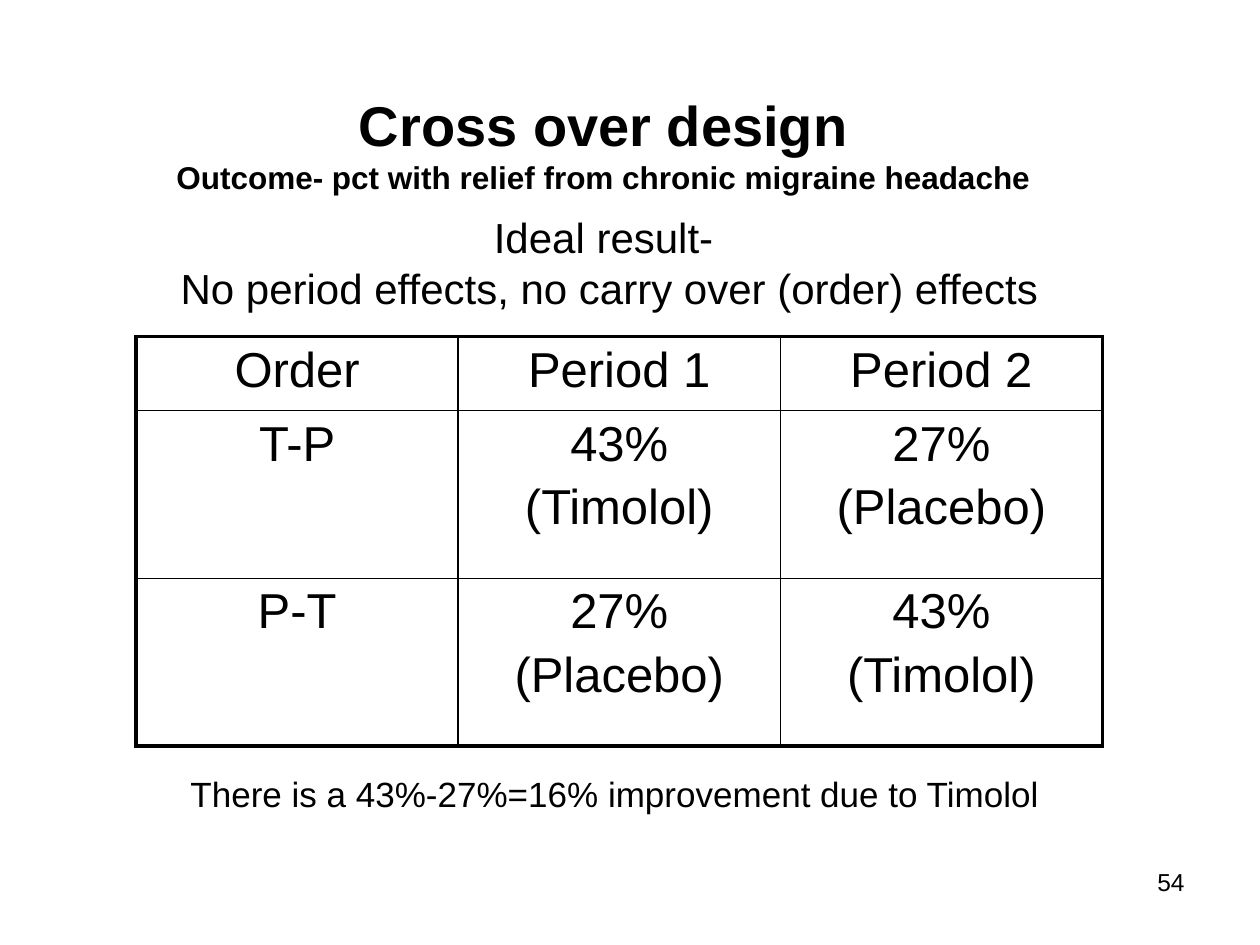
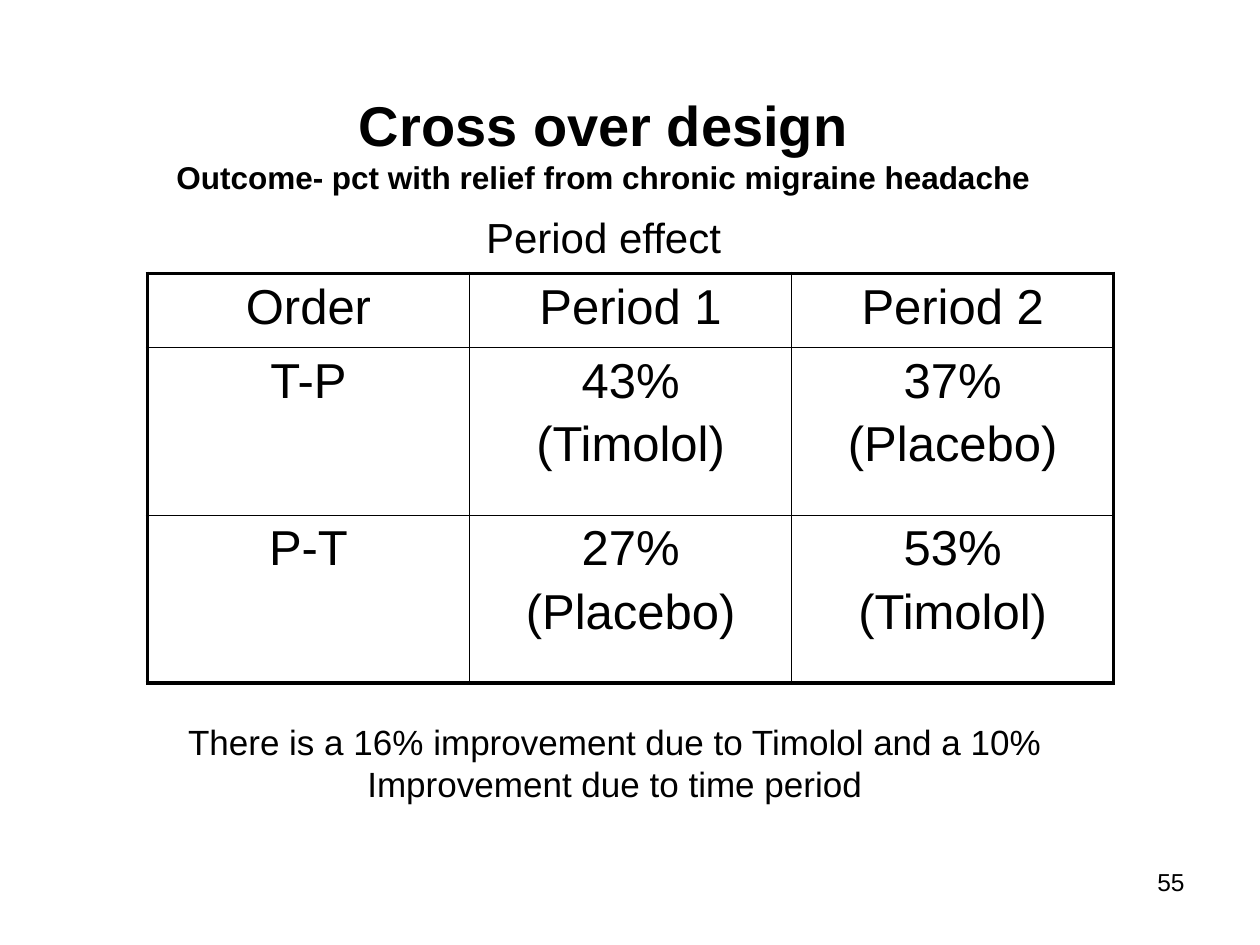
"""Build two slides on a cross over design, each with a heading, a results table and a conclusion."""
from lxml.etree import SubElement
from pptx import Presentation
from pptx.dml.color import RGBColor
from pptx.enum.text import PP_ALIGN
from pptx.oxml.ns import qn
from pptx.util import Inches, Pt

BLACK = RGBColor(0, 0, 0)
FONT = "Arial"
THICK, THIN = 2.25, 1
ROW_HEIGHTS = (0.59, 1.33, 1.33)
TABLE_WIDTH = 7.67
HEADER = ("Order", "Period 1", "Period 2")
TITLE = ("Cross over design", "Outcome- pct with relief from chronic migraine headache")

SLIDES = [
    dict(
        number="54",
        subtitle=("Ideal result-", " No period effects, no carry over (order) effects"),
        title_height=1.87,
        table_at=(1.08, 2.67),
        rows=(("T-P", "43%\n(Timolol)", "27%\n(Placebo)"),
              ("P-T", "27%\n(Placebo)", "43%\n(Timolol)")),
        conclusion=("There is a 43%-27%=16% improvement due to Timolol",),
        conclusion_at=(0.92, 6.08, 7.92, 0.43),
    ),
    dict(
        number="55",
        subtitle=("Period effect",),
        title_height=1.47,
        table_at=(1.17, 2.17),
        rows=(("T-P", "43%\n(Timolol)", "37%\n(Placebo)"),
              ("P-T", "27%\n(Placebo)", "53%\n(Timolol)")),
        conclusion=("There is a 16% improvement due to Timolol and a 10%",
                    "Improvement due to time period"),
        conclusion_at=(0.92, 5.67, 7.92, 0.77),
    ),
]


def write(tf, text, size, bold=False, align=PP_ALIGN.CENTER, before=0):
    """Add one paragraph, using the empty first one if there is one."""
    p = tf.paragraphs[0] if not tf.text else tf.add_paragraph()
    p.alignment = align
    p.space_before = Pt(before)
    r = p.add_run()
    r.text = text
    r.font.name, r.font.size, r.font.bold = FONT, Pt(size), bold
    r.font.color.rgb = BLACK


def text_box(s, at):
    tf = s.shapes.add_textbox(*map(Inches, at)).text_frame
    tf.word_wrap = True
    return tf


def set_borders(cell, widths):
    tcPr = cell._tc.get_or_add_tcPr()
    for side, width in widths.items():
        ln = SubElement(tcPr, qn(f"a:ln{side}"), w=str(Pt(width)))
        fill = SubElement(ln, qn("a:solidFill"))
        SubElement(fill, qn("a:srgbClr"), val=str(BLACK))


def add_results(s, at, rows):
    n_rows, n_cols = len(rows), len(rows[0])
    size = (TABLE_WIDTH, sum(ROW_HEIGHTS))
    table = s.shapes.add_table(n_rows, n_cols, *map(Inches, at + size)).table
    for row, height in zip(table.rows, ROW_HEIGHTS):
        row.height = Inches(height)
    for i, row in enumerate(rows):
        for j, text in enumerate(row):
            cell = table.cell(i, j)
            edges = dict(L=j == 0, R=j == n_cols - 1, T=i == 0, B=i == n_rows - 1)
            set_borders(cell, {side: THICK if outer else THIN for side, outer in edges.items()})
            cell.fill.background()
            for k, line in enumerate(text.split("\n")):
                write(cell.text_frame, line, 28, before=5 if k else 0)


def add_slide(prs, number, subtitle, title_height, table_at, rows, conclusion, conclusion_at):
    s = prs.slides.add_slide(prs.slide_layouts[6])
    add_results(s, table_at, (HEADER,) + rows)
    tf = text_box(s, (1.08, 0.67, 7.42, title_height))
    for line, size in zip(TITLE, (32, 18)):
        write(tf, line, size, bold=True)
    for k, line in enumerate(subtitle):
        write(tf, line, 24, before=0 if k else 9.2)
    tf = text_box(s, conclusion_at)
    for line in conclusion:
        write(tf, line, 20)
    write(text_box(s, (7.17, 6.83, 2.33, 0.52)), number, 14, align=PP_ALIGN.RIGHT)


def main():
    prs = Presentation()
    prs.slide_width, prs.slide_height = Inches(10), Inches(7.5)
    for slide in SLIDES:
        add_slide(prs, **slide)
    prs.save("out.pptx")


if __name__ == "__main__":
    main()
